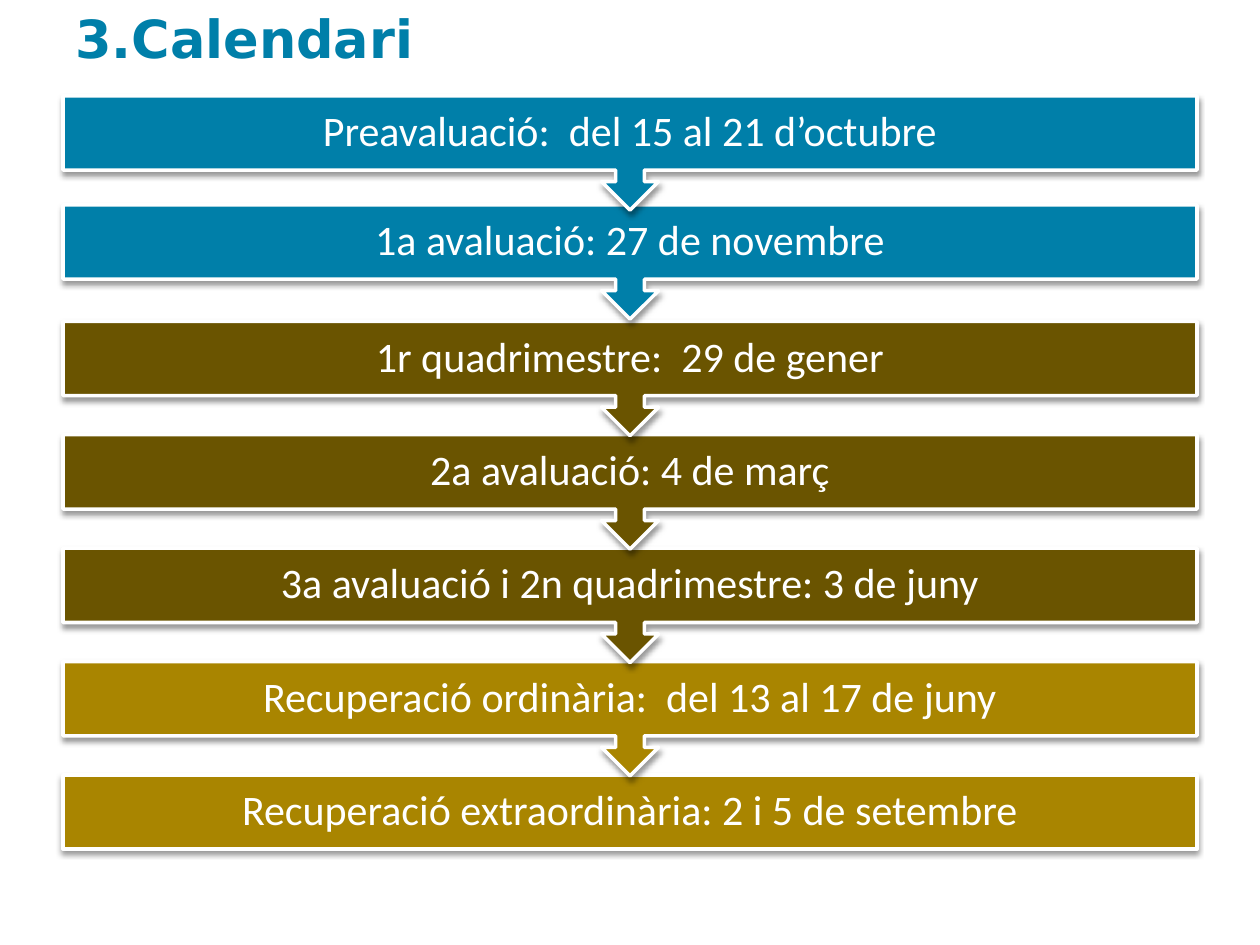
from lxml import etree
from pptx import Presentation
from pptx.dml.color import RGBColor
from pptx.enum.shapes import MSO_SHAPE
from pptx.enum.text import MSO_ANCHOR, PP_ALIGN
from pptx.oxml.ns import qn
from pptx.util import Pt

RECT, CALLOUT = MSO_SHAPE.RECTANGLE, MSO_SHAPE.UP_ARROW_CALLOUT
MIDDLE, BOTTOM = MSO_ANCHOR.MIDDLE, MSO_ANCHOR.BOTTOM
LEFT, CENTER = PP_ALIGN.LEFT, PP_ALIGN.CENTER

BLUE, BROWN, GOLD, WHITE = "007FA9", "6A5400", "A98500", "FFFFFF"
MARGIN, WIDTH = 36, 648
BOX_HEIGHT, CALLOUT_HEIGHT = 42.5, 65.4
PITCH = 64.8
COURSE_TOP = 183.6  # first step of the evenly spaced run

STEPS = [
    ("Preavaluació:  del 15 al 21 d’octubre", BLUE, 54.7),
    ("1a avaluació: 27 de novembre", BLUE, 117),
] + [
    (text, color, COURSE_TOP + i * PITCH)
    for i, (text, color) in enumerate([
        ("1r quadrimestre:  29 de gener", BROWN),
        ("2a avaluació: 4 de març", BROWN),
        ("3a avaluació i 2n quadrimestre: 3 de juny", BROWN),
        ("Recuperació ordinària:  del 13 al 17 de juny", GOLD),
        ("Recuperació extraordinària: 2 i 5 de setembre", GOLD),
    ])
]


def rgb(color):
    return RGBColor.from_string(color)


def add_shadow(sp):
    sp.shadow.inherit = False
    effects = sp._element.spPr.find(qn("a:effectLst"))
    shadow = etree.SubElement(effects, qn("a:outerShdw"), blurRad=str(Pt(3)),
                              dist=str(Pt(2)), dir="5400000", rotWithShape="0")
    black = etree.SubElement(shadow, qn("a:srgbClr"), val="000000")
    etree.SubElement(black, qn("a:alpha"), val="40000")


def add_panel(slide, kind, top, height, color):
    sp = slide.shapes.add_shape(kind, Pt(MARGIN), Pt(top), Pt(WIDTH), Pt(height))
    sp.fill.solid()
    sp.fill.fore_color.rgb = rgb(color)
    sp.line.color.rgb = rgb(WHITE)
    sp.line.width = Pt(2)
    add_shadow(sp)
    return sp


def add_text(slide, text, top, height, font, size, color,
             align=LEFT, anchor=MIDDLE, inset=7.2, bold=False):
    sp = slide.shapes.add_textbox(Pt(MARGIN), Pt(top), Pt(WIDTH), Pt(height))
    tf = sp.text_frame
    tf.word_wrap = True
    tf.vertical_anchor = anchor
    tf.margin_left = tf.margin_right = Pt(inset)
    tf.margin_top = tf.margin_bottom = Pt(min(inset, 13.7) if inset > 7.2 else 3.6)
    p = tf.paragraphs[0]
    p.text = text
    p.alignment = align
    p.font.name, p.font.size, p.font.bold = font, Pt(size), bold
    p.font.color.rgb = rgb(color)
    return p


def add_step(slide, text, color, top, last):
    if last:
        add_panel(slide, RECT, top, BOX_HEIGHT, color)
    else:
        # Turned over, so that the arrow points to the next step
        add_panel(slide, CALLOUT, top, CALLOUT_HEIGHT, color).rotation = 180
    p = add_text(slide, text, top, BOX_HEIGHT, "Calibri", 24, WHITE,
                 align=CENTER, inset=13.7)
    p.line_spacing = 0.9


def main():
    prs = Presentation()
    prs.slide_width, prs.slide_height = Pt(720), Pt(540)
    slide = prs.slides.add_slide(prs.slide_layouts[6])

    # Calendar steps, last one first so that each arrow lies over the next box
    for step in reversed(STEPS):
        add_step(slide, *step, last=step is STEPS[-1])

    # Title
    add_text(slide, "3.Calendari", 6.5, 36.7, "DejaVu Sans", 30, BLUE,
             anchor=BOTTOM, bold=True)

    prs.save("out.pptx")


if __name__ == "__main__":
    main()
